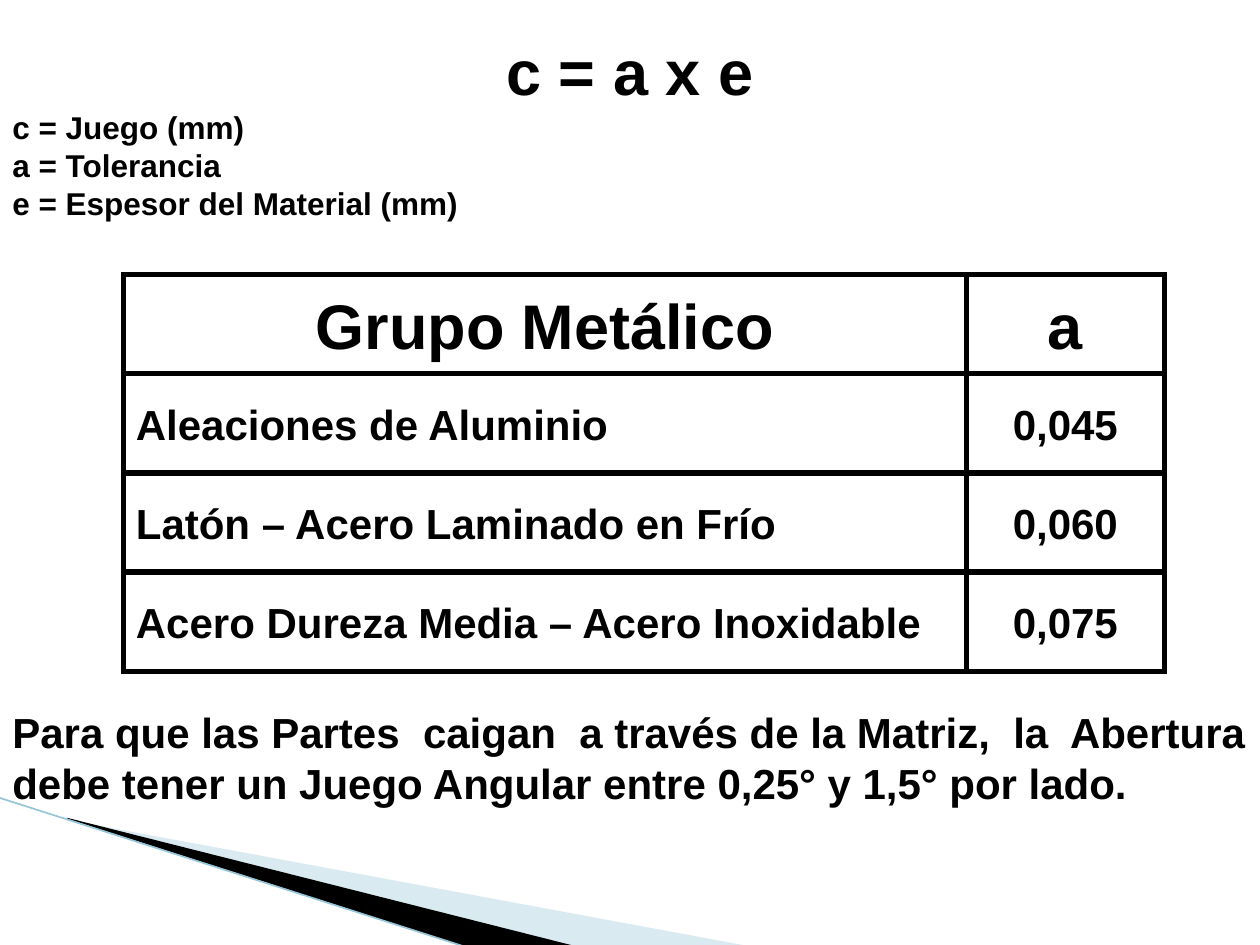
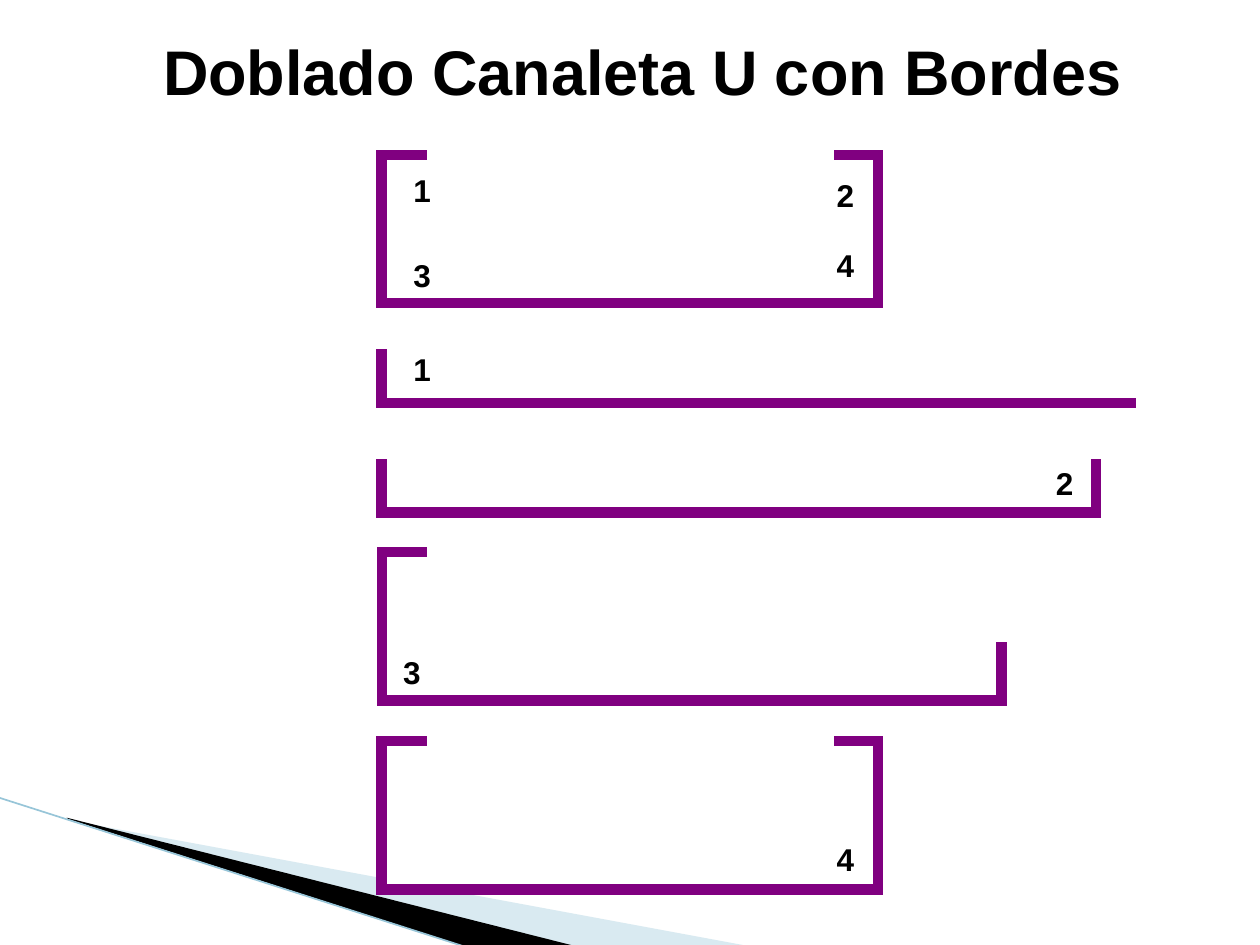
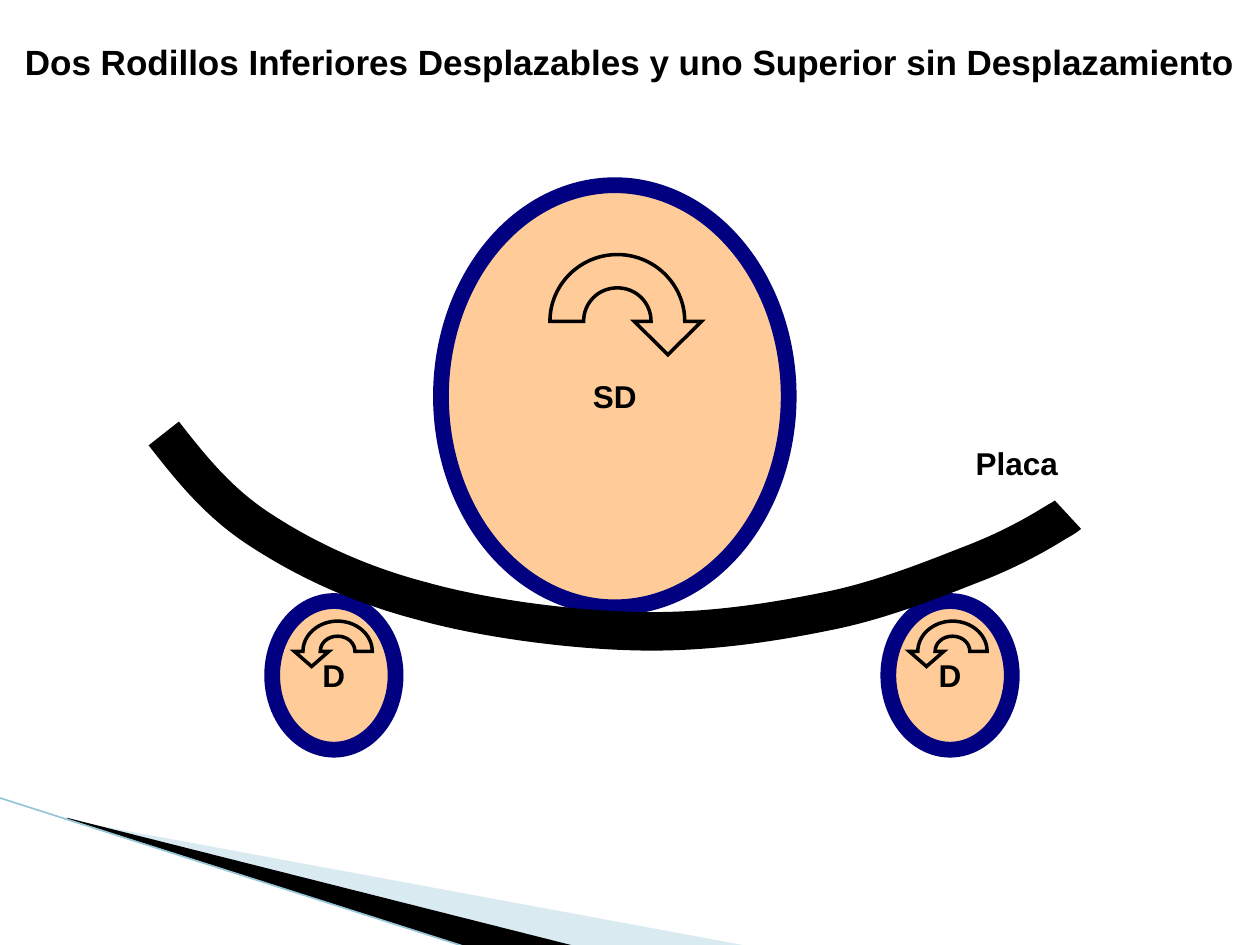
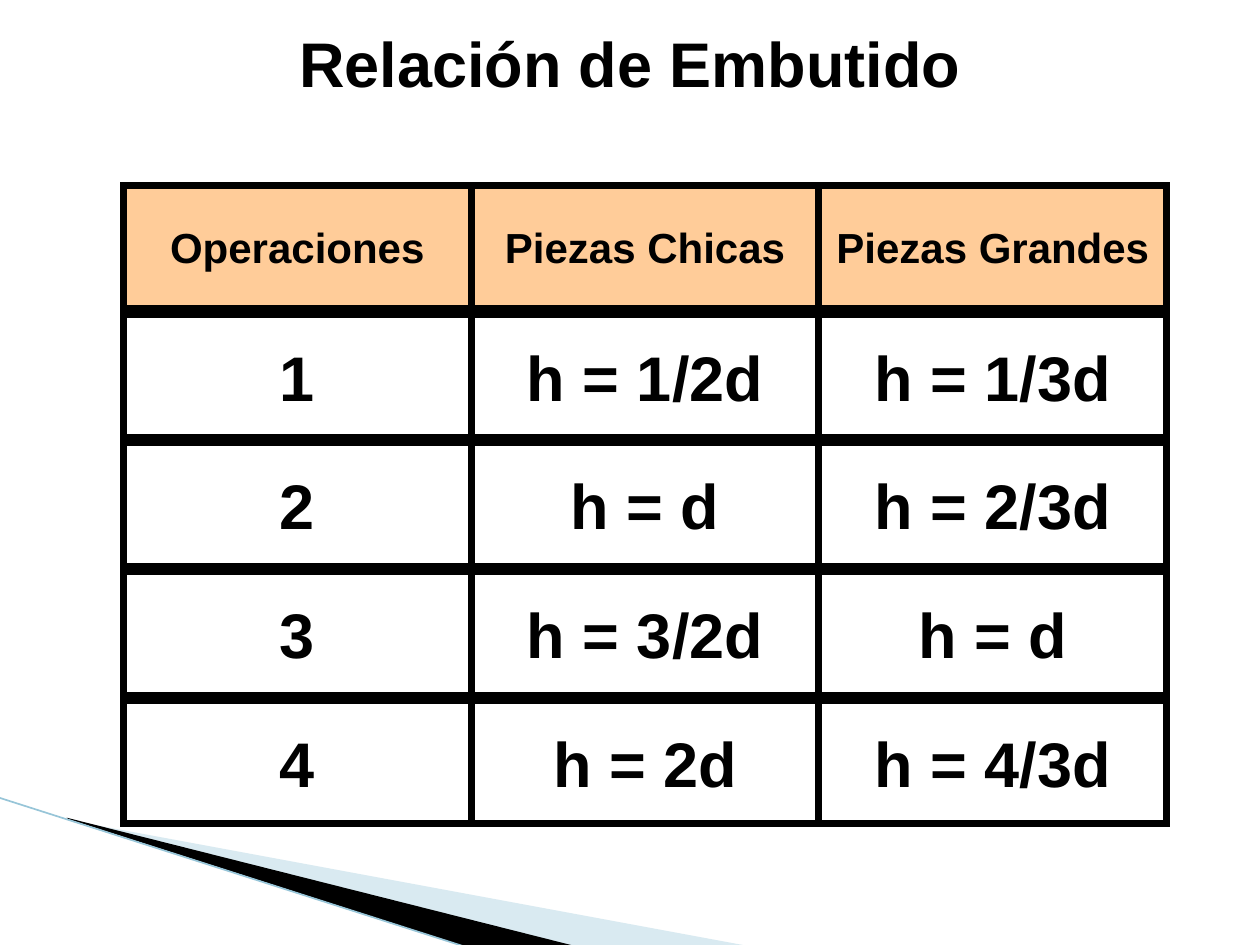
from pptx import Presentation
from pptx.dml.color import RGBColor
from pptx.enum.shapes import MSO_CONNECTOR as Connector, MSO_SHAPE as Shape
from pptx.enum.text import MSO_ANCHOR as Anchor, MSO_AUTO_SIZE as AutoSize, PP_ALIGN as Align
from pptx.oxml.ns import qn
from pptx.oxml.xmlchemy import OxmlElement
from pptx.util import Inches, Pt

WIDTH, HEIGHT = 10, 7.5
BLACK, WHITE, PEACH, NAVY, PURPLE = "000000", "FFFFFF", "FFCC99", "000080", "800080"
FONT = {"name": "Arial", "bold": True}
GRID_LEFT = 0.98

hue = RGBColor.from_string


def write(frame, lines, align=Align.CENTER, spacing=None, **frame_format):
    """Write (text, size) lines in the common font; only the first is aligned."""
    for key, value in frame_format.items():
        setattr(frame, key, value)
    for index, (text, size) in enumerate(lines):
        paragraph = frame.add_paragraph() if index else frame.paragraphs[0]
        paragraph.text = text
        paragraph.alignment = Align.LEFT if index else align
        if spacing:
            paragraph.line_spacing = spacing
        for key, value in {**FONT, "size": Pt(size)}.items():
            setattr(paragraph.font, key, value)
        paragraph.font.color.rgb = hue(BLACK)


def draw(slide, place, fill, line, width, text="", size=18, align=Align.CENTER,
         kind=Shape.RECTANGLE):
    """Add a filled and outlined preset shape with one line of text."""
    shape = slide.shapes.add_shape(kind, *map(Inches, place))
    shape.shadow.inherit = False
    shape.fill.solid()
    shape.fill.fore_color.rgb = hue(fill)
    shape.line.color.rgb = hue(line)
    shape.line.width = Pt(width)
    miter = OxmlElement("a:miter")
    miter.set("lim", "800000")
    shape.line._get_or_add_ln().append(miter)
    if text:
        write(shape.text_frame, [(text, size)], align,
              word_wrap=False, vertical_anchor=Anchor.MIDDLE)
    return shape


prs = Presentation()
prs.slide_width, prs.slide_height = Inches(WIDTH), Inches(HEIGHT)
blank = prs.slide_layouts[6]
clearance, channel, rollers, drawing = [prs.slides.add_slide(blank) for _ in range(4)]

# Corner wedges, shared through the layout
for placeholder in list(blank.placeholders):
    placeholder.element.getparent().remove(placeholder.element)
wedges = [
    ([(0.55, 6.51), (5.95, 7.51), (4.56, 7.51), (0.55, 6.5)], "A0CBDC", 40),
    ([(0.53, 6.49), (4.57, 7.51), (3.72, 7.52), (0.54, 6.5)], BLACK, 100),
]
for corners, color, opacity in wedges:
    points = [(Inches(x), Inches(y)) for x, y in corners]
    builder = clearance.shapes.build_freeform(*points[0])
    builder.add_line_segments(points[1:], close=False)
    wedge = builder.convert_to_shape()
    wedge.shadow.inherit = False
    wedge.fill.solid()
    wedge.fill.fore_color.rgb = hue(color)
    wedge.line.fill.background()
    if opacity < 100:
        alpha = OxmlElement("a:alpha")
        alpha.set("val", str(opacity * 1000))
        wedge.element.spPr.find(".//" + qn("a:srgbClr")).append(alpha)
    blank.shapes._spTree.append(wedge.element)
edge = clearance.shapes.add_connector(
    Connector.STRAIGHT, Inches(-0.01), Inches(6.33), Inches(3.71), Inches(7.52))
edge.line.color.rgb = hue("97C5D8")
edge.line.width = Pt(0.95)
edge.element.spPr.append(OxmlElement("a:effectLst"))
blank.shapes._spTree.append(edge.element)

# Titles and running text: slide, left, top, height, alignment, spacing, lines
texts = [
    (clearance, 0, 0.21, 1.6, Align.CENTER, None, [
        ("c = a x e", 36), ("c = Juego (mm)", 18), ("a = Tolerancia", 18),
        ("e = Espesor del Material (mm)", 18)]),
    (clearance, 0, 5.56, 0.9, Align.LEFT, None, [
        ("Para que las Partes  caigan  a través de la Matriz,  la  Abertura "
         "debe tener un Juego Angular entre 0,25° y 1,5° por lado.", 24)]),
    (channel, 0.2, 0.21, 0.7, Align.CENTER, None, [("Doblado Canaleta U con Bordes", 36)]),
    (rollers, 0, 0.21, 0.5, Align.CENTER, 1.2, [
        ("Dos Rodillos Inferiores Desplazables y uno Superior sin Desplazamiento", 20)]),
    (drawing, 0, 0.21, 0.64, Align.CENTER, 0.9, [("Relación de Embutido", 36)]),
]
for slide, left, top, height, align, spacing, lines in texts:
    box = slide.shapes.add_textbox(
        Inches(left), Inches(top), Inches(WIDTH - left), Inches(height))
    write(box.text_frame, lines, align, spacing, word_wrap=True,
          auto_size=AutoSize.SHAPE_TO_FIT_TEXT)

# Boxed grids: slide, top, column widths, box height, row pitch, header fill
# and size, body size, alignment of the first column, line width, rows
grids = [
    (clearance, 2.18, [6.69, 1.57], 0.79, 2.36 / 3, WHITE, 36, 24, Align.LEFT, 3, [
        ("Grupo Metálico", "a"),
        ("Aleaciones de Aluminio", "0,045"),
        ("Latón – Acero Laminado en Frío", "0,060"),
        ("Acero Dureza Media – Acero Inoxidable", "0,075")]),
    (drawing, 1.47, [2.76] * 3, 0.98, 4.09 / 4, PEACH, 24, 36, Align.CENTER, 4, [
        ("Operaciones", "Piezas Chicas", "Piezas Grandes"),
        ("1", "h = 1/2d", "h = 1/3d"),
        ("2", "h = d", "h = 2/3d"),
        ("3", "h = 3/2d", "h = d"),
        ("4", "h = 2d", "h = 4/3d")]),
]
for (slide, top, widths, height, pitch, header_fill, header_size, body_size,
     first_align, line_width, rows) in grids:
    for r, row in enumerate(rows):
        for c, text in enumerate(row):
            place = (GRID_LEFT + sum(widths[:c]), top + r * pitch, widths[c], height)
            draw(slide, place, WHITE if r else header_fill, BLACK, line_width, text,
                 body_size if r else header_size,
                 first_align if r and c == 0 else Align.CENTER)

# Bending steps: top, width and height of the channel, the openings cut
# from it (place, line width), and its bend numbers (text, place)
left, wall, flange = 3.03, 1.18, 0.71
near, far = 3.19, 6.57
steps = [
    (1.23, 3.94, wall, [((3.43, 0.99, 3.15, 0.39), 6)], [
        ("1", (near, 1.39, 0.32, 0.24)), ("2", (far, 1.47, 0.28, 0.16)),
        ("3", (3.27, 2.1, 0.16, 0.16)), ("4", (far, 2.02, 0.28, 0.16))]),
    (2.49, 6.14, flange, [((2.87, 2.49, 6.69, 0.24), 6), ((9.02, 2.65, 0.39, 0.71), 0.75)], [
        ("1", (near, 2.81, 0.32, 0.24))]),
    (3.36, 5.67, flange, [((2.8, 3.36, 6.46, 0.24), 6)], [
        ("2", (8.31, 3.75, 0.28, 0.16))]),
    (4.38, 4.92, wall, [((3.43, 4.3, 4.96, 0.39), 6), ((7.68, 4.62, 1, 0.47), 0.75)], [
        ("3", (near, 5.25, 0.16, 0.16))]),
    (5.88, 3.94, wall, [((3.43, 5.8, 3.15, 0.39), 6), ((7.13, 2.18, 2.6, 0.39), 6)], [
        ("4", (far, 6.74, 0.28, 0.16))]),
]
for top, width, height, openings, numbers in steps:
    draw(channel, (left, top, width, height), WHITE, PURPLE, 6)
    for place, line_width in openings:
        draw(channel, place, WHITE, WHITE, line_width)
    for text, place in numbers:
        draw(channel, place, WHITE, WHITE, 6, text)

# Rollers
for text, place in [("SD", (3.5, 1.47, 2.76, 3.35)),
                    ("D", (2.16, 4.77, 0.98, 1.18)),
                    ("D", (7.05, 4.77, 0.98, 1.18))]:
    draw(rollers, place, PEACH, NAVY, 9, text, kind=Shape.OVAL)

# Bent plate: a start, then segments of three points (curve) or one (line)
plate = [
    [(1.3, 3.44)],
    [(1.52, 3.72), (1.74, 4), (2.09, 4.22)],
    [(2.43, 4.44), (2.85, 4.64), (3.35, 4.77)],
    [(3.85, 4.91), (4.54, 5), (5.08, 5.01)],
    [(5.62, 5.02), (6.13, 4.94), (6.57, 4.85)],
    [(7.02, 4.76), (7.45, 4.58), (7.76, 4.46)],
    [(8.06, 4.34), (8.26, 4.22), (8.39, 4.14)],
    [(8.52, 4.07), (8.53, 4.03), (8.54, 3.99)],
]

# Turning arrows: half ring with a head, in units of the outer radii
turn = [
    [(0.5, 0)],
    [(0.5, -0.28), (0.28, -0.5), (0, -0.5)],
    [(-0.28, -0.5), (-0.5, -0.28), (-0.5, 0)],
    [(-1, 0)],
    [(-1, -0.55), (-0.55, -1), (0, -1)],
    [(0.55, -1), (1, -0.55), (1, 0)],
    [(1.25, 0)], [(0.75, 0.5)], [(0.25, 0)],
]
outlines = [(plate, False, None, 22)]
for x, y, radius_x, radius_y, direction in [
        (4.9, 2.55, 0.535, 0.53, 1),
        (2.68, 5.17, 0.275, 0.24, -1),
        (7.56, 5.17, 0.275, 0.24, -1)]:
    arrow = [[(x + direction * radius_x * u, y + radius_y * v) for u, v in segment]
             for segment in turn]
    outlines.append((arrow, True, PEACH, 2))
for segments, closed, fill, width in outlines:
    points = [(Inches(x), Inches(y)) for segment in segments for x, y in segment]
    builder = rollers.shapes.build_freeform(*points[0])
    builder.add_line_segments(points[1:], close=closed)
    outline = builder.convert_to_shape()
    strokes = iter(outline.element.findall(".//" + qn("a:lnTo")))
    for segment in segments[1:]:
        group = [next(strokes) for _ in segment]
        if len(group) == 3:
            curve = OxmlElement("a:cubicBezTo")
            group[0].addprevious(curve)
            for stroke in group:
                curve.append(stroke[0])
                stroke.getparent().remove(stroke)
    outline.shadow.inherit = False
    if fill:
        outline.fill.solid()
        outline.fill.fore_color.rgb = hue(fill)
    else:
        outline.fill.background()
    outline.line.color.rgb = hue(BLACK)
    outline.line.width = Pt(width)
    miter = OxmlElement("a:miter")
    miter.set("lim", "800000")
    outline.line._get_or_add_ln().append(miter)

# Trimmed end of the plate and its label
trim = draw(rollers, (8.31, 3.2, 1, 1), WHITE, WHITE, 0.75)
trim.rotation = 317.2
draw(rollers, (7.44, 3.44, 1.26, 0.47), WHITE, WHITE, 0.75, "Placa")

prs.save("out.pptx")
